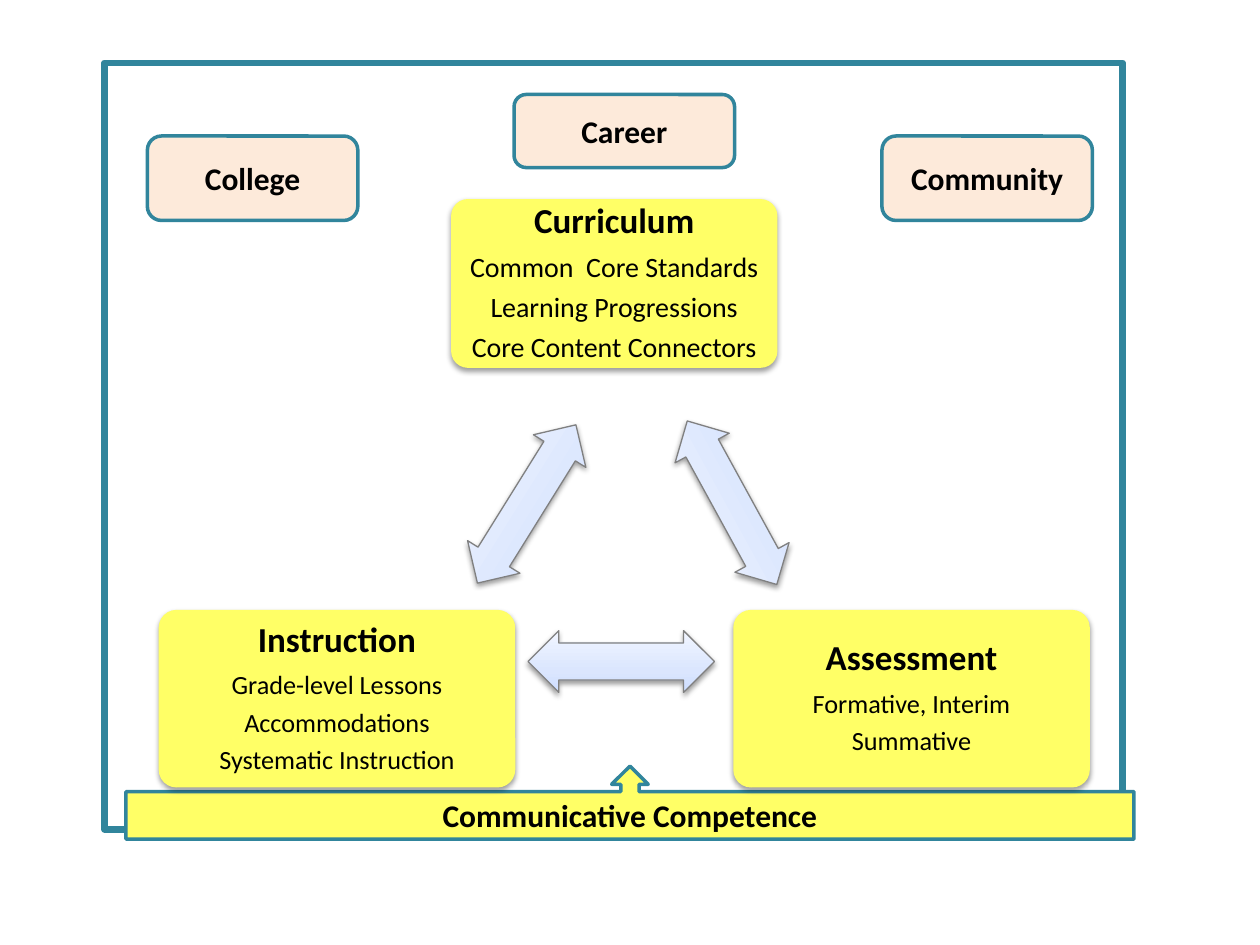
import copy
from dataclasses import dataclass

import pptx
import pptx.dml.color
import pptx.enum.shapes
import pptx.enum.text
import pptx.oxml
import pptx.oxml.ns
import pptx.util
from pptx.util import Inches

SHAPE = pptx.enum.shapes.MSO_SHAPE


@dataclass(frozen=True)
class Theme:
    font: str = "Calibri"
    text: str = "000000"
    teal: str = "31859C"
    yellow: str = "FFFF66"
    peach: str = "FDEADA"
    arrow_line: str = "808080"
    arrow_stops: tuple = ((0, "CDDDFF"), (0.35, "DBE6FE"), (1, "F1F5FF"))
    label_size: float = 18
    heading_size: float = 20


THEME = Theme()


def rgb(value):
    return pptx.dml.color.RGBColor.from_string(value)


def add_text(p, text, size, bold=False, spacing=None, after=0):
    """Fill one centred paragraph with a formatted run."""
    p.alignment = pptx.enum.text.PP_ALIGN.CENTER
    p.space_after = pptx.util.Pt(after)
    if spacing:
        p.line_spacing = spacing
    r = p.add_run()
    r.text = text
    r.font.name = THEME.font
    r.font.size = pptx.util.Pt(size)
    r.font.bold = bold
    r.font.color.rgb = rgb(THEME.text)


def add_shape(slide, kind, box, fill=None, line=None, width=2):
    sp = slide.shapes.add_shape(kind, *(Inches(v) for v in box))
    sp.shadow.inherit = False
    if fill:
        sp.fill.solid()
        sp.fill.fore_color.rgb = rgb(fill)
    else:
        sp.fill.background()
    if line:
        sp.line.color.rgb = rgb(line)
        sp.line.width = pptx.util.Pt(width)
    else:
        sp.line.fill.background()
    sp.text_frame.word_wrap = True
    sp.text_frame.vertical_anchor = pptx.enum.text.MSO_ANCHOR.MIDDLE
    return sp


def add_shadow(sp):
    """Give a shape a soft shadow straight below it."""
    effects = sp._element.spPr.find(pptx.oxml.ns.qn("a:effectLst"))
    effects.append(pptx.oxml.parse_xml(
        f'<a:outerShdw {pptx.oxml.ns.nsdecls("a")} blurRad="39370" dist="20320" '
        'dir="5400000" rotWithShape="0"><a:srgbClr val="000000">'
        '<a:alpha val="38000"/></a:srgbClr></a:outerShdw>'))


def add_label(slide, kind, box, text, fill):
    sp = add_shape(slide, kind, box, fill, THEME.teal)
    add_text(sp.text_frame.paragraphs[0], text, THEME.label_size, bold=True)


def add_card(slide, box, heading, lines, size):
    """Yellow card with a bold heading over plain lines."""
    sp = add_shape(slide, SHAPE.ROUNDED_RECTANGLE, box, THEME.yellow)
    sp.adjustments[0] = 0.1
    add_shadow(sp)
    tf = sp.text_frame
    # The rounded corners already inset the text, so the side margins are small
    tf.margin_left = tf.margin_right = Inches(0.05)
    tf.margin_top = tf.margin_bottom = Inches(0.12)
    for i, text in enumerate([heading, *lines]):
        p = tf.paragraphs[0] if i == 0 else tf.add_paragraph()
        pt = THEME.heading_size if i == 0 else size
        add_text(p, text, pt, bold=i == 0, spacing=0.9, after=0.35 * pt)


def add_double_arrow(slide, cx, cy, rotation):
    """Double-headed gradient arrow around a centre point."""
    w, h = 1.48, 0.49
    sp = add_shape(slide, SHAPE.LEFT_RIGHT_ARROW, (cx - w / 2, cy - h / 2, w, h),
                   line=THEME.arrow_line, width=0.75)
    sp.adjustments[0], sp.adjustments[1] = 0.6, 0.5
    sp.rotation = rotation
    sp.fill.gradient()
    sp.fill.gradient_angle = 90
    # The default gradient has two stops, so a middle one is added
    stops = sp._element.spPr.find(".//" + pptx.oxml.ns.qn("a:gsLst"))
    stops.insert(1, copy.deepcopy(stops[0]))
    for stop, (position, color) in zip(sp.fill.gradient_stops, THEME.arrow_stops):
        stop.position = position
        stop.color.rgb = rgb(color)
    add_shadow(sp)


def goals(slide, left, top, width):
    """College and community at the sides, career raised between them."""
    side_w, side_h = 1.67, 0.67
    kind = SHAPE.ROUNDED_RECTANGLE
    for x, text in ((left, "College"), (left + width - side_w, "Community")):
        add_label(slide, kind, (x, top + 0.33, side_w, side_h), text, THEME.peach)
    add_label(slide, kind, (left + 2.91, top, 1.75, 0.58), "Career", THEME.peach)


def triangle(slide, left, top, width, height):
    """Three cards at the corners of a triangle, joined by arrows."""
    card_w, card_h = 2.83, 1.41
    base = top + height - card_h
    add_card(slide, (left + 2.32, top, 2.59, 1.34), "Curriculum",
             ["Common  Core Standards", "Learning Progressions",
              "Core Content Connectors"], 16)
    add_card(slide, (left, base, card_w, card_h), "Instruction",
             ["Grade-level Lessons", "Accommodations", "Systematic Instruction"], 15)
    add_card(slide, (left + width - card_w, base, card_w, card_h), "Assessment",
             ["Formative, Interim", "Summative"], 15)
    for dx, dy, rotation in ((2.92, 2.42, 301.9), (4.55, 2.41, 241.3), (3.67, 3.67, 0)):
        add_double_arrow(slide, left + dx, top + dy, rotation)


def main():
    prs = pptx.Presentation()
    prs.slide_width, prs.slide_height = Inches(10), Inches(7.5)
    slide = prs.slides.add_slide(prs.slide_layouts[6])

    # Frame, with the foundation bar across its lower edge
    add_shape(slide, SHAPE.RECTANGLE, (0.83, 0.5, 8.08, 6.08), line=THEME.teal, width=4)
    add_label(slide, SHAPE.UP_ARROW_CALLOUT, (1, 6.08, 8, 0.58),
              "Communicative Competence", THEME.yellow)

    goals(slide, 1.17, 0.75, 7.5)
    triangle(slide, 1.26, 1.58, 7.39, 4.67)
    prs.save("out.pptx")


if __name__ == "__main__":
    main()
